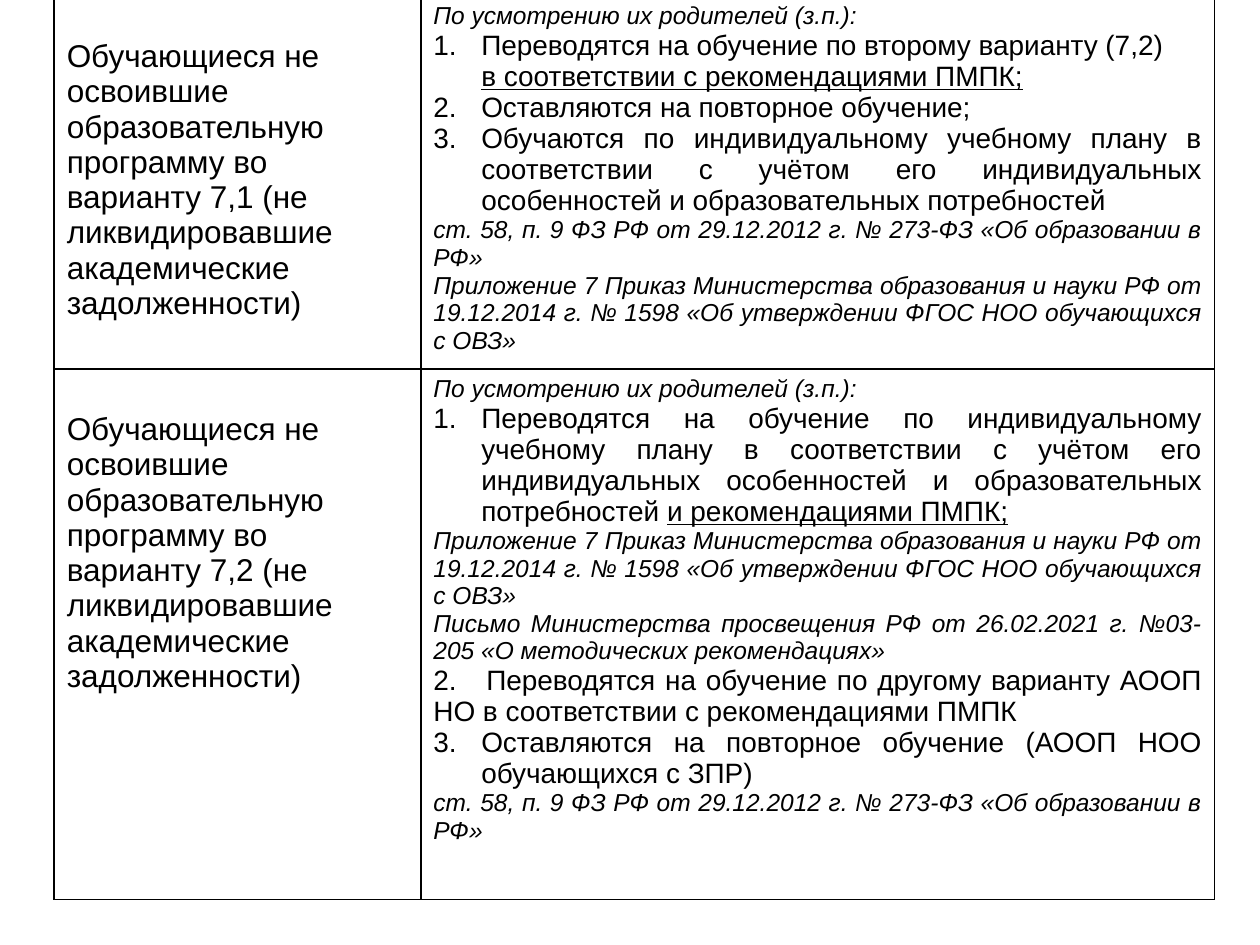
from lxml.etree import SubElement
from pptx import Presentation
from pptx.dml.color import RGBColor
from pptx.enum.text import PP_ALIGN as Align
from pptx.oxml.ns import qn
from pptx.util import Inches, Pt

SLIDE_SIZE = (10, 7.5)
TABLE_LEFT, TABLE_TOP = 0.43, -0.03
COLUMNS = (2.91, 6.3)
ROWS = (2.96, 4.21)
INDENT, TAB_STOP = 0.38, 0.42
LABEL_TOP = 0.34
INK, PAPER = "000000", "FFFFFF"
NOTE, ITEM, TABBED = "note", "item", "tabbed"

LABEL = ("Обучающиеся не освоившие образовательную программу во варианту {} "
         "(не ликвидировавшие академические задолженности)")
CHOICE = "По усмотрению их родителей (з.п.):"
LAW = "ст. 58, п. 9 ФЗ РФ от 29.12.2012 г. № 273-ФЗ «Об образовании в РФ»"
ORDER = ("Приложение 7 Приказ Министерства образования и науки РФ от 19.12.2014 г. "
         "№ 1598 «Об утверждении ФГОС НОО обучающихся с ОВЗ»")
LETTER = ("Письмо Министерства просвещения РФ от 26.02.2021 г. №03-205 "
          "«О методических рекомендациях»")

# kind, text, underlined ending, first number, alignment
CASES = [
    ("7,1", [
        (NOTE, CHOICE, "", 1, Align.JUSTIFY),
        (ITEM, "Переводятся на обучение по второму варианту (7,2)\v",
         "в соответствии с рекомендациями ПМПК;", 1, Align.LEFT),
        (ITEM, "Оставляются на повторное обучение;", "", 1, Align.JUSTIFY),
        (ITEM, "Обучаются по индивидуальному учебному плану в соответствии с учётом "
         "его индивидуальных особенностей и образовательных потребностей",
         "", 1, Align.JUSTIFY),
        (NOTE, LAW, "", 1, Align.JUSTIFY),
        (NOTE, ORDER, "", 1, Align.JUSTIFY),
    ]),
    ("7,2", [
        (NOTE, CHOICE, "", 1, Align.JUSTIFY),
        (ITEM, "Переводятся на обучение по индивидуальному учебному плану в "
         "соответствии с учётом его индивидуальных особенностей и образовательных "
         "потребностей ", "и рекомендациями ПМПК;", 1, Align.JUSTIFY),
        (NOTE, ORDER, "", 1, Align.JUSTIFY),
        (NOTE, LETTER, "", 1, Align.JUSTIFY),
        (TABBED, "2.\tПереводятся на обучение по другому варианту АООП НО в "
         "соответствии с рекомендациями ПМПК", "", 1, Align.JUSTIFY),
        (ITEM, "Оставляются на повторное обучение (АООП НОО обучающихся с ЗПР)",
         "", 3, Align.JUSTIFY),
        (NOTE, LAW, "", 1, Align.JUSTIFY),
    ]),
]


def color(value):
    """Turn a hex string into a colour."""
    return RGBColor.from_string(value)


def set_font(para, size, italic=False):
    """Set the font of a whole paragraph."""
    font = para.font
    font.name, font.size, font.italic = "Arial", Pt(size), italic
    font.color.rgb = color(INK)


def frame_cell(cell):
    """Give a cell thin black borders and a plain fill."""
    props = cell._tc.get_or_add_tcPr()
    for side in ("a:lnL", "a:lnR", "a:lnT", "a:lnB"):
        line = SubElement(props, qn(side), w=str(Pt(1)))
        SubElement(SubElement(line, qn("a:solidFill")), qn("a:srgbClr"), val=INK)
    cell.fill.solid()
    cell.fill.fore_color.rgb = color(PAPER)


def set_layout(para, kind, start):
    """Number a list item, or place the tab stop of a tabbed line."""
    props = para._p.get_or_add_pPr()
    if kind == ITEM:
        props.set("marL", str(Inches(INDENT)))
        props.set("indent", str(-Inches(INDENT)))
        number = SubElement(props, qn("a:buAutoNum"), type="arabicPeriod")
        if start > 1:
            number.set("startAt", str(start))
    elif kind == TABBED:
        stops = SubElement(props, qn("a:tabLst"))
        SubElement(stops, qn("a:tab"), pos=str(Inches(TAB_STOP)), algn="l")


def write_options(cell, options):
    """Write the numbered options and their legal references."""
    frame = cell.text_frame
    for index, (kind, text, ending, start, align) in enumerate(options):
        para = frame.add_paragraph() if index else frame.paragraphs[0]
        para.alignment = align
        set_layout(para, kind, start)
        para.text = text
        if ending:
            span = para.add_run()
            span.text = ending
            span.font.underline = True
        set_font(para, 14 if kind == NOTE else 16, kind == NOTE)
        for span in para.runs:
            span.font.size = para.font.size


def main():
    """Build the slide with the table of learning options."""
    deck = Presentation()
    deck.slide_width, deck.slide_height = map(Inches, SLIDE_SIZE)
    page = deck.slides.add_slide(deck.slide_layouts[6])
    table = page.shapes.add_table(
        len(ROWS), len(COLUMNS), Inches(TABLE_LEFT), Inches(TABLE_TOP),
        Inches(sum(COLUMNS)), Inches(sum(ROWS))).table
    table.first_row = table.horz_banding = False
    for column, width in zip(table.columns, COLUMNS):
        column.width = Inches(width)
    for row, height, (variant, options) in zip(table.rows, ROWS, CASES):
        row.height = Inches(height)
        label, details = row.cells
        frame_cell(label)
        frame_cell(details)
        label.margin_top = Inches(LABEL_TOP)
        para = label.text_frame.paragraphs[0]
        para.text = LABEL.format(variant)
        set_font(para, 18)
        write_options(details, options)
    deck.save("out.pptx")


if __name__ == "__main__":
    main()
